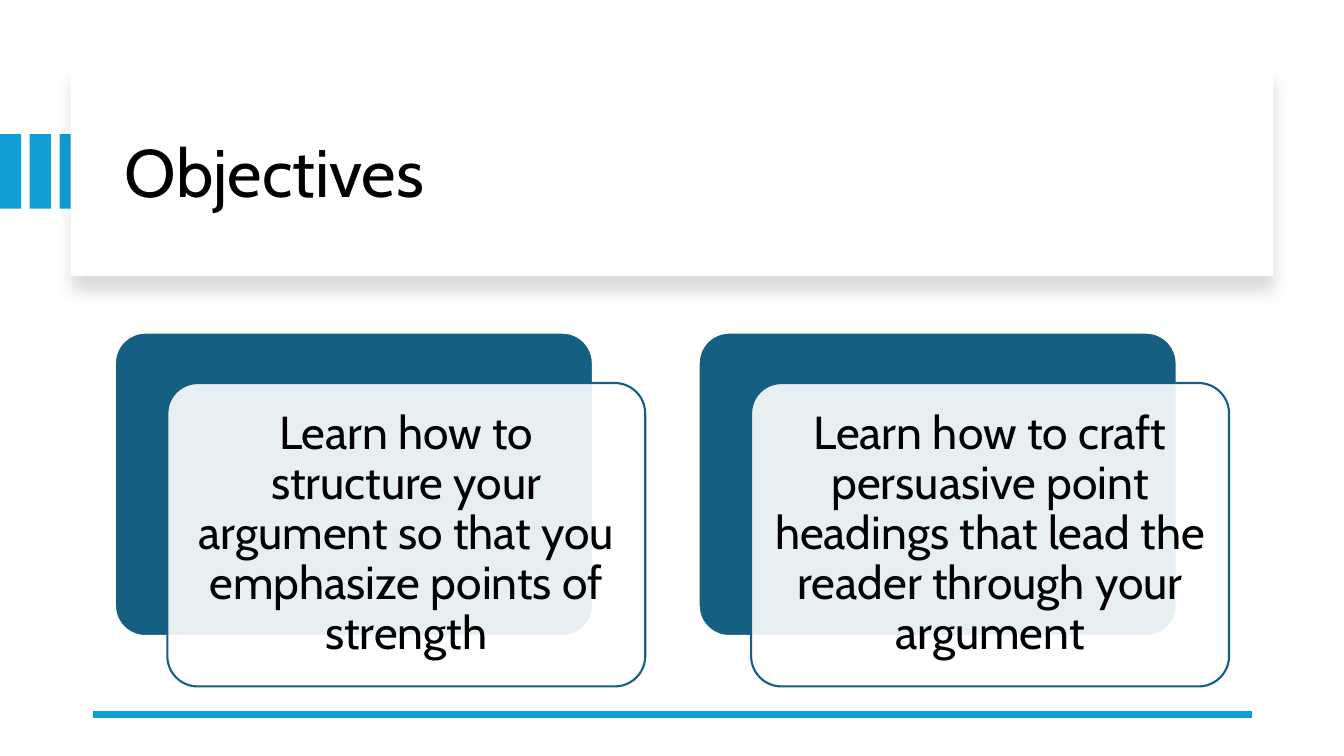
from lxml import etree
from pptx import Presentation
from pptx.dml.color import RGBColor
from pptx.enum.shapes import MSO_CONNECTOR as Connector, MSO_SHAPE as Shape
from pptx.enum.text import MSO_ANCHOR as Anchor, PP_ALIGN as Align
from pptx.oxml.ns import qn
from pptx.util import Inches, Pt

FONT = "Cabin"
BLACK, WHITE, SKY, TEAL = "000000", "FFFFFF", "0F9ED5", "156082"
OBJECTIVES = [
    "Learn how to structure your argument so that you emphasize points of strength",
    "Learn how to craft persuasive point headings that lead the reader through your argument",
]


def color(value):
    return RGBColor.from_string(value)


def add_box(shapes, kind, place, fill, line=None):
    box = shapes.add_shape(kind, *map(Inches, place))
    box.shadow.inherit = False
    box.fill.solid()
    box.fill.fore_color.rgb = color(fill)
    if line:
        box.line.color.rgb = color(line)
        box.line.width = Pt(1.5)
    else:
        box.line.fill.background()
    return box


def add_text(shapes, text, place, size, align=Align.LEFT, inset=None):
    box = shapes.add_textbox(*map(Inches, place))
    frame = box.text_frame
    frame.word_wrap = True
    frame.vertical_anchor = Anchor.MIDDLE
    if inset is not None:
        frame.margin_left = frame.margin_right = Inches(inset)
        frame.margin_top = frame.margin_bottom = Inches(inset)
    para = frame.paragraphs[0]
    para.alignment = align
    para.line_spacing = 0.9
    span = para.add_run()
    span.text = text
    span.font.name = FONT
    span.font.size = Pt(size)
    span.font.color.rgb = color(BLACK)
    return box


def set_alpha(parent, percent):
    """Give the color inside parent an opacity in percent."""
    rgb = next(parent.iter(qn("a:srgbClr")))
    etree.SubElement(rgb, qn("a:alpha"), val=str(percent * 1000))


def cast_shadow(box, blur, distance, opacity):
    """Drop a black shadow straight down from the box."""
    effects = box._element.spPr.find(qn("a:effectLst"))
    shadow = etree.SubElement(
        effects, qn("a:outerShdw"), blurRad=str(Pt(blur)), dist=str(Pt(distance)),
        dir=str(90 * 60000), algn="t", rotWithShape="0")
    etree.SubElement(shadow, qn("a:srgbClr"), val=BLACK)
    set_alpha(shadow, opacity)


def add_header(page, left, top, width, height):
    bars = page.shapes.add_group_shape().shapes
    for index in range(3):
        add_box(bars, Shape.RECTANGLE, (index * 0.295, top + 0.66, 0.21, 0.74), SKY)
    panel = add_box(page.shapes, Shape.RECTANGLE, (left, top, width, height), WHITE)
    cast_shadow(panel, blur=11, distance=10, opacity=15)
    add_text(page.shapes, "Objectives", (left + 0.44, top + 0.22, 11.13, 1.7), 48)


def add_rule(page, left, top, width):
    rule = page.shapes.add_connector(
        Connector.STRAIGHT, Inches(left + width), Inches(top), Inches(left), Inches(top))
    rule.line.color.rgb = color(SKY)
    rule.line.width = Pt(4.5)
    etree.SubElement(rule._element.spPr, qn("a:effectLst"))


def add_card(shapes, text, left, top, width, height):
    """Add a solid card with a translucent text card offset over it."""
    front_left, front_top, pad = left + 0.52, top + 0.5, 0.09
    back = add_box(shapes, Shape.ROUNDED_RECTANGLE, (left, top, width, height), TEAL, WHITE)
    front = add_box(shapes, Shape.ROUNDED_RECTANGLE,
                    (front_left, front_top, width, height), WHITE, TEAL)
    back.adjustments[0] = front.adjustments[0] = 0.1
    set_alpha(front._element.spPr.find(qn("a:solidFill")), 90)
    place = (front_left + pad, front_top + pad, width - 2 * pad, height - 2 * pad)
    add_text(shapes, text, place, 33, Align.CENTER, inset=0.14)


def add_cards(page, left, top, step):
    cards = page.shapes.add_group_shape().shapes
    for index, text in enumerate(OBJECTIVES):
        add_card(cards, text, left + index * step, top, 4.74, 3.01)


def main():
    deck = Presentation()
    deck.slide_width, deck.slide_height = Inches(13.33), Inches(7.5)
    page = deck.slides.add_slide(deck.slide_layouts[6])
    add_header(page, 0.7, 0.67, 11.93, 2.07)
    add_rule(page, 0.92, 7.09, 11.5)
    add_cards(page, 1.14, 3.3, step=5.79)
    deck.save("out.pptx")


if __name__ == "__main__":
    main()
